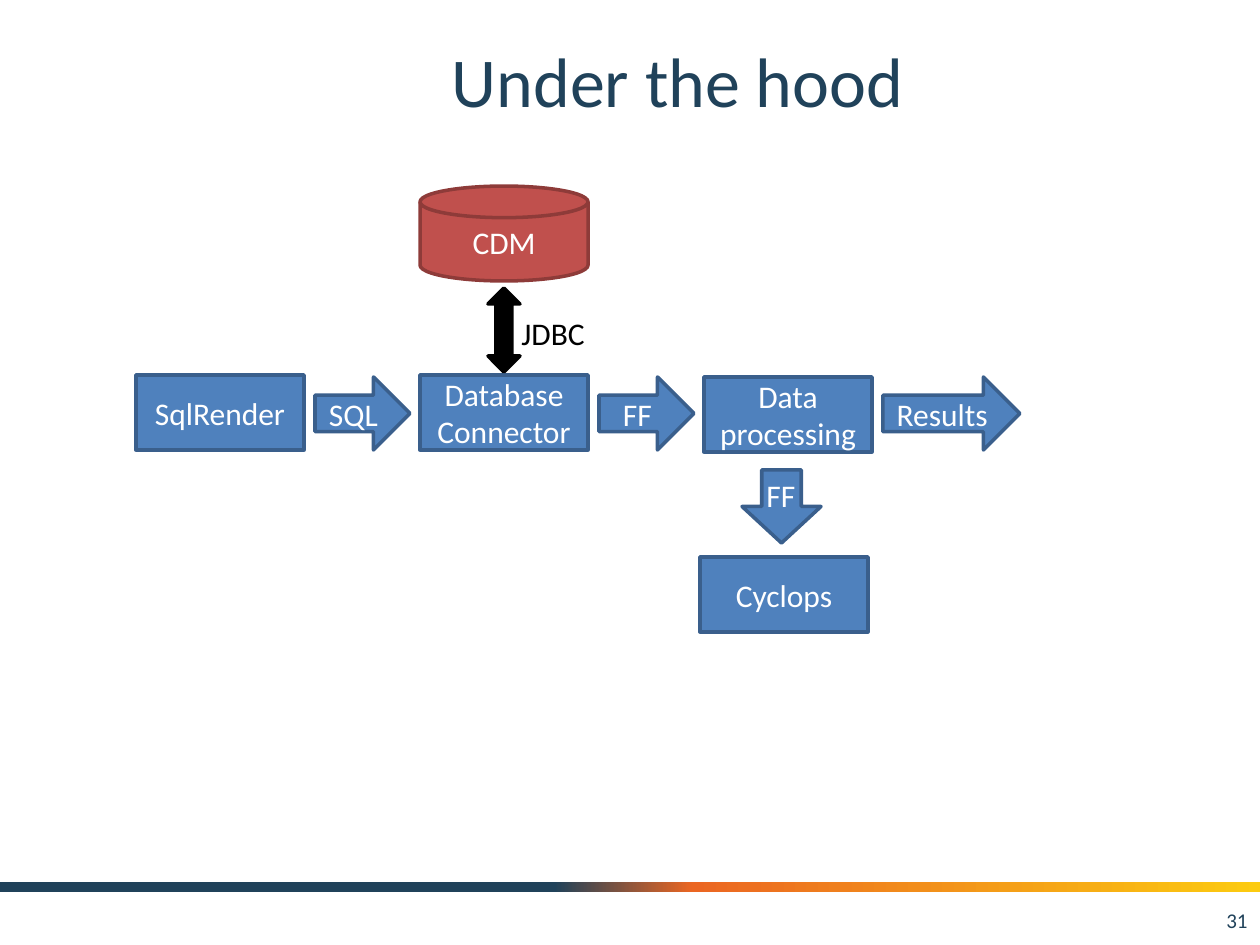
import copy
import pptx
import pptx.dml.color
import pptx.enum.shapes
import pptx.enum.text
import pptx.util

SHAPE = pptx.enum.shapes.MSO_SHAPE
ALIGN = pptx.enum.text.PP_ALIGN
ANCHOR = pptx.enum.text.MSO_ANCHOR
FONT = "Calibri"
NAVY, WHITE, BLACK = "20425A", "FFFFFF", "000000"
BLUE, BLUE_EDGE = "4F81BD", "3A5F8C"
RED, RED_EDGE = "C0504D", "8E3B39"

# Content: each stage with the arrow that leaves it (label, width)
STAGES = [
    (["SqlRender"], 375, "SQL", 95),
    (["Database", "Connector"], 375, "FF", 95),
    (["Data processing"], 377, "Results", 137),
]
STRIPE_STOPS = [(44, NAVY), (55, "EB6622"), (100, "FCCB10")]

# Layout in px, 126 to the inch
ROW_LEFT, STAGE_PITCH = 136, 284
BOX_WIDTH, BOX_HEIGHT = 168, 75
ARROW_TOP, ARROW_HEIGHT, ARROW_GAP = 377, 73, 11


def px(length):
    return pptx.util.Emu(round(length * 914400 / 126))


def color(value):
    return pptx.dml.color.RGBColor.from_string(value)


def write(box, lines, size=18, ink=WHITE, align=ALIGN.CENTER,
          anchor=ANCHOR.MIDDLE, wrap=True):
    frame = box.text_frame
    frame.word_wrap = wrap
    frame.vertical_anchor = anchor
    if not wrap:
        frame.auto_size = pptx.enum.text.MSO_AUTO_SIZE.SHAPE_TO_FIT_TEXT
    for index, line in enumerate(lines):
        para = frame.add_paragraph() if index else frame.paragraphs[0]
        para.alignment = align
        span = para.add_run()
        span.text = line
        span.font.name = FONT
        span.font.size = pptx.util.Pt(size)
        span.font.color.rgb = color(ink)


def add_text(page, place, lines, **style):
    write(page.shapes.add_textbox(*map(px, place)), lines, **style)


def add_block(page, kind, place, lines=(), fill=BLUE, edge=BLUE_EDGE):
    block = page.shapes.add_shape(kind, *map(px, place))
    block.shadow.inherit = False
    block.fill.solid()
    block.fill.fore_color.rgb = color(fill)
    block.line.color.rgb = color(edge)
    block.line.width = pptx.util.Pt(2)
    write(block, lines)


def add_stripe(page, place):
    stripe = page.shapes.add_shape(SHAPE.RECTANGLE, *map(px, place))
    stripe.shadow.inherit = False
    stripe.line.fill.background()
    stripe.fill.gradient()
    stripe.fill.gradient_angle = 0
    stop_list = stripe.fill._fill._gradFill.gsLst
    stop_list.append(copy.deepcopy(stop_list[-1]))
    for stop, (position, value) in zip(stripe.fill.gradient_stops, STRIPE_STOPS):
        stop.color.rgb = color(value)
        stop.position = position / 100


def main():
    deck = pptx.Presentation()
    deck.slide_width, deck.slide_height = px(1260), px(945)
    page = deck.slides.add_slide(deck.slide_layouts[6])

    # Frame: stripe, title and page number
    add_stripe(page, (0, 882, 1260, 10))
    add_text(page, (158, 22, 1039, 116), ["Under the hood"], size=40, ink=NAVY)
    add_text(page, (966, 895, 294, 50), ["31"], size=12, ink=NAVY,
             align=ALIGN.RIGHT)

    # Main row of stages and arrows
    for index, (lines, top, label, arrow_width) in enumerate(STAGES):
        left = ROW_LEFT + index * STAGE_PITCH
        add_block(page, SHAPE.RECTANGLE, (left, top, BOX_WIDTH, BOX_HEIGHT), lines)
        arrow_left = left + BOX_WIDTH + ARROW_GAP
        add_block(page, SHAPE.RIGHT_ARROW,
                  (arrow_left, ARROW_TOP, arrow_width, ARROW_HEIGHT), [label])

    # Database above the connector
    add_block(page, SHAPE.FLOWCHART_MAGNETIC_DISK,
              (ROW_LEFT + STAGE_PITCH, 186, BOX_WIDTH, 95), ["CDM"],
              fill=RED, edge=RED_EDGE)
    add_block(page, SHAPE.UP_DOWN_ARROW, (488, 288, 32, 84),
              fill=BLACK, edge=BLACK)
    loose = dict(align=ALIGN.LEFT, anchor=ANCHOR.TOP, wrap=False)
    add_text(page, (509, 308, 89, 50), ["JDBC"], ink=BLACK, **loose)

    # Cyclops below data processing
    add_block(page, SHAPE.RECTANGLE, (700, 557, BOX_WIDTH, BOX_HEIGHT), ["Cyclops"])
    add_block(page, SHAPE.DOWN_ARROW, (742, 470, 79, 73))
    add_text(page, (754, 470, 54, 50), ["FF"], **loose)

    deck.save("out.pptx")


if __name__ == "__main__":
    main()
